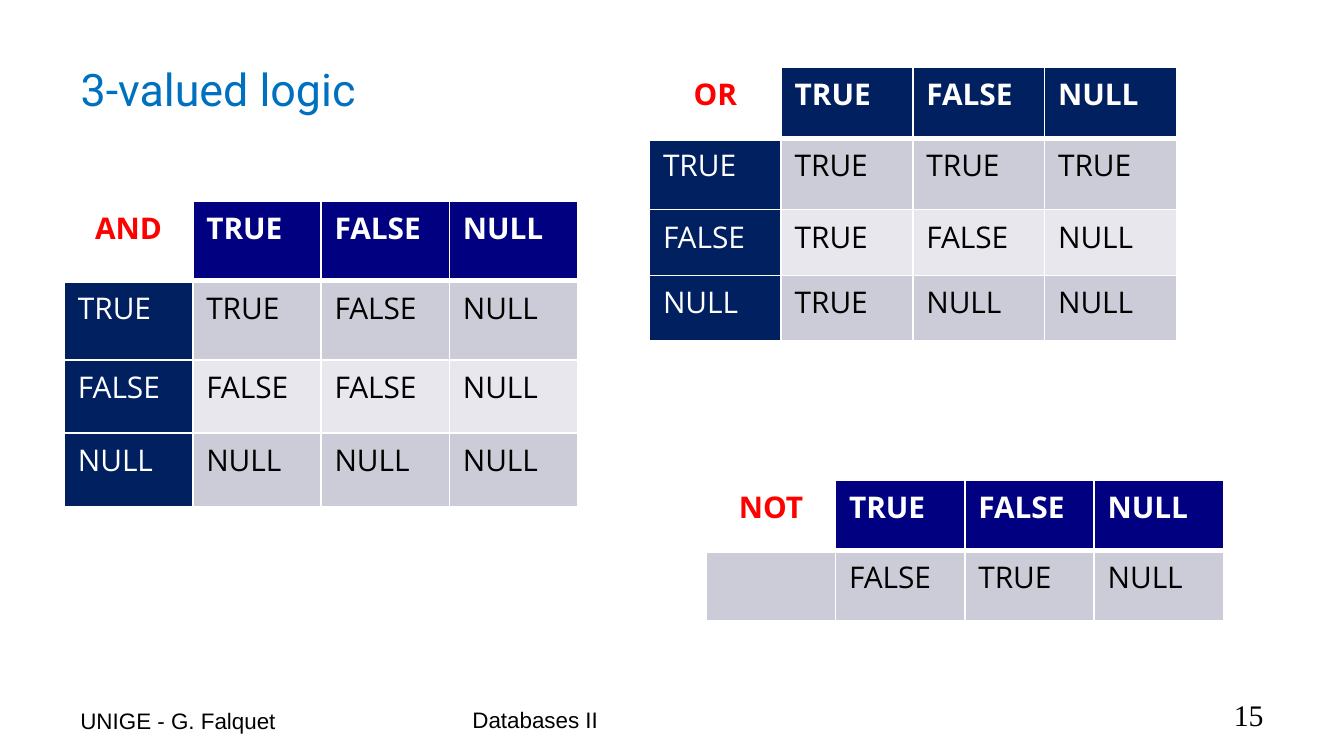
from lxml import etree
from pptx import Presentation
from pptx.dml.color import RGBColor
from pptx.enum.text import MSO_ANCHOR, MSO_AUTO_SIZE, PP_ALIGN
from pptx.oxml.ns import qn
from pptx.util import Inches, Pt

LEFT, CENTER, RIGHT = PP_ALIGN.LEFT, PP_ALIGN.CENTER, PP_ALIGN.RIGHT
MIDDLE, BOTTOM = MSO_ANCHOR.MIDDLE, MSO_ANCHOR.BOTTOM
NO_AUTOFIT = MSO_AUTO_SIZE.NONE
TITLE_ONLY = 5

# Widescreen slide and its grid of square units
SLIDE_WIDTH = Inches(10)
SLIDE_HEIGHT = SLIDE_WIDTH * 9 // 16
COLUMNS, ROWS = 100, 56.25

WHITE, BLACK, RED, BLUE = "FFFFFF", "000000", "FF0000", "0070C0"
NAVY, INDIGO = "002060", "000080"
BANDS = ("CCCCD8", "E7E7ED")
VALUES = ["TRUE", "FALSE", "NULL"]


def color(value):
    return RGBColor.from_string(value)


def write(frame, text, font="Open Sans", size=16, ink=BLACK, bold=False, align=LEFT):
    paragraph = frame.paragraphs[0]
    paragraph.alignment = align
    run = paragraph.add_run()
    run.text = text
    run.font.name = font
    run.font.size = Pt(size)
    run.font.bold = bold
    run.font.color.rgb = color(ink)


def add_border(cell, side, points):
    line = etree.SubElement(cell._tc.get_or_add_tcPr(), qn(f"a:ln{side}"), w=str(Pt(points)))
    fill = etree.SubElement(line, qn("a:solidFill"))
    etree.SubElement(fill, qn("a:srgbClr"), val=WHITE)


class LogicSlide:
    def __init__(self, deck):
        self.column = deck.slide_width / COLUMNS
        self.row = deck.slide_height / ROWS
        self.slide = deck.slides.add_slide(deck.slide_layouts[TITLE_ONLY])

    def box(self, left, top, width, height):
        return (round(left * self.column), round(top * self.row),
                round(width * self.column), round(height * self.row))

    def title(self, text, area):
        holder = self.slide.shapes.title
        holder.left, holder.top, holder.width, holder.height = self.box(*area)
        holder.text_frame.auto_size = NO_AUTOFIT
        holder.text_frame.vertical_anchor = MIDDLE
        write(holder.text_frame, text, font="Roboto", size=24, ink=BLUE)

    def footer(self, text, area, **style):
        frame = self.slide.shapes.add_textbox(*self.box(*area)).text_frame
        frame.word_wrap = True
        frame.vertical_anchor = BOTTOM
        write(frame, text, **style)

    def truth_table(self, operator, results, left, top, width, heights, header_fill):
        """Each result row starts with its operand, which may be empty."""
        grid = [[operator] + VALUES] + results
        area = self.box(left, top, width, sum(heights))
        table = self.slide.shapes.add_table(len(grid), len(grid[0]), *area).table
        table.first_row = table.horz_banding = False
        for table_column in table.columns:
            table_column.width = round(area[2] / len(grid[0]))
        for r, words in enumerate(grid):
            table.rows[r].height = round(heights[r] * self.row)
            for c, word in enumerate(words):
                self.truth_cell(table.cell(r, c), word, r, c, header_fill)

    def truth_cell(self, cell, word, r, c, header_fill):
        # A thick rule separates the header from the results
        for side, thick_row in (("L", None), ("R", None), ("T", 1), ("B", 0)):
            add_border(cell, side, 3 if r == thick_row else 1)

        corner = r == 0 and c == 0
        operand = c == 0 and bool(word)
        if corner:
            fill, ink = WHITE, RED
        elif r == 0:
            fill, ink = header_fill, WHITE
        elif operand:
            fill, ink = NAVY, WHITE
        else:
            fill, ink = BANDS[(r - 1) % 2], BLACK
        cell.fill.solid()
        cell.fill.fore_color.rgb = color(fill)
        if word:
            write(cell.text_frame, word, ink=ink, bold=r == 0,
                  align=CENTER if corner else LEFT)


def main():
    deck = Presentation()
    deck.slide_width, deck.slide_height = SLIDE_WIDTH, SLIDE_HEIGHT
    page = LogicSlide(deck)
    page.title("3-valued logic", (5, 3.15, 88.3, 6.9))

    # Truth tables
    page.truth_table("AND", [["TRUE", "TRUE", "FALSE", "NULL"],
                             ["FALSE", "FALSE", "FALSE", "NULL"],
                             ["NULL", "NULL", "NULL", "NULL"]],
                     4.8, 14.98, 38.2, [5.9, 5.9, 5.45, 5.45], INDIGO)
    page.truth_table("OR", [["TRUE", "TRUE", "TRUE", "TRUE"],
                            ["FALSE", "TRUE", "FALSE", "NULL"],
                            ["NULL", "TRUE", "NULL", "NULL"]],
                     48.33, 5, 39.2, [5.3, 5.3, 4.9, 4.9], NAVY)
    page.truth_table("NOT", [["", "FALSE", "TRUE", "NULL"]],
                     52.55, 35.73, 38.5, [5.23, 5.23], INDIGO)

    # Footer
    page.footer("15", (71.7, 51.2, 23.3, 3.8), font="Times New Roman", align=RIGHT)
    page.footer("UNIGE - G. Falquet", (5, 51.2, 23.3, 3.9), font="Arial", size=12)
    page.footer("Databases II", (34.17, 51.25, 31.7, 3.8), font="Arial", size=12)

    deck.save("out.pptx")


if __name__ == "__main__":
    main()
